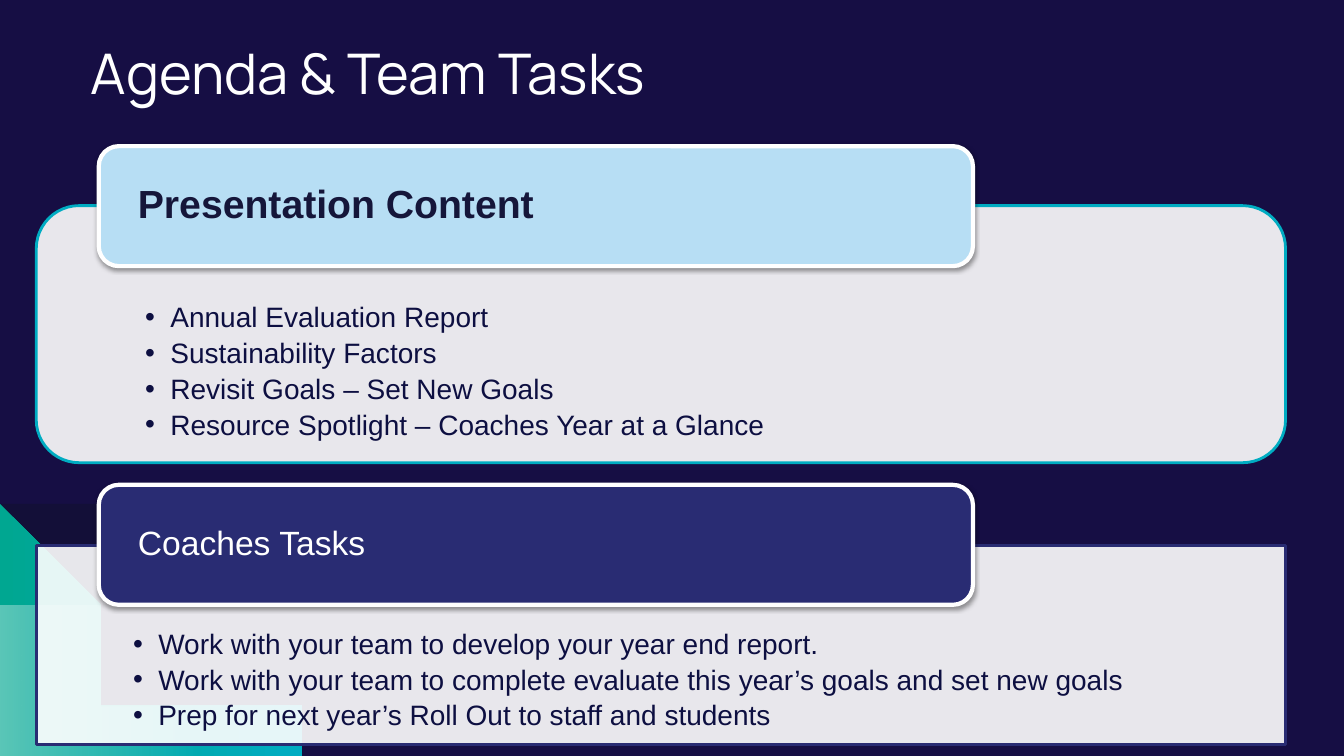
from dataclasses import dataclass
from typing import NamedTuple

from lxml import etree
from pptx import Presentation, util as u
from pptx.dml.color import RGBColor
from pptx.enum import shapes, text
from pptx.oxml.ns import qn

RECT = shapes.MSO_SHAPE.RECTANGLE
ROUND = shapes.MSO_SHAPE.ROUNDED_RECTANGLE
Point = tuple[float, float]


class Box(NamedTuple):
    left: float
    top: float
    width: float
    height: float


class Stop(NamedTuple):
    color: str
    alpha: int = 100


@dataclass
class Swoosh:
    """A corner shape under a cubic curve, filled from left to right."""
    curve: tuple[Point, Point, Point, Point]
    stops: list[Stop]


@dataclass
class Card:
    head: str
    font: dict
    fill: str
    edge: str
    kind: int
    tab: Box
    panel: Box
    body: Box
    items: list[str]


SWOOSHES = [
    Swoosh(((0, 4.13), (0.98, 7.39), (3.03, 7.5), (3.03, 7.5)),
           [Stop("12102F", 54)]),
    Swoosh(((0, 4.22), (0.95, 7.39), (2.95, 7.5), (2.95, 7.5)),
           [Stop("00A791"), Stop("00ACC2")]),
    Swoosh(((0, 5.06), (0, 5.06), (0.91, 7.35), (2.16, 7.5)),
           [Stop("FFFFFF", 36), Stop("FFFFFF", 0)]),
]
CARDS = [
    Card("Presentation Content", {"size": u.Pt(28), "bold": True, "color": "15163A"},
         "B7DEF4", "00ACC2", ROUND, Box(0.98, 1.45, 8.67, 1.19),
         Box(0.36, 2.04, 12.39, 2.55), Box(0.48, 2.17, 12.14, 2.3),
         ["Annual Evaluation Report", "Sustainability Factors",
          "Revisit Goals – Set New Goals",
          "Resource Spotlight – Coaches Year at a Glance"]),
    Card("Coaches Tasks", {"size": u.Pt(24), "bold": False, "color": "FFFFFF"},
         "292C73", "292C73", RECT, Box(0.98, 4.81, 8.67, 1.19),
         Box(0.36, 5.41, 12.39, 1.98), Box(0.36, 5.41, 12.39, 1.98),
         ["Work with your team to develop your year end report.",
          "Work with your team to complete evaluate this year’s goals and set new goals",
          "Prep for next year’s Roll Out to staff and students"]),
]


def paint(color, code: str, alpha: int = 100) -> None:
    """Set a colour format from a hex string and an opacity in percent."""
    color.rgb = RGBColor.from_string(code)
    if alpha < 100:
        host = color._xFill if hasattr(color, "_xFill") else color._color._xClr
        node = next(host.iter(qn("a:srgbClr")))
        etree.SubElement(node, qn("a:alpha"), val=str(alpha * 1000))


def solid(fill, code: str, alpha: int = 100) -> None:
    fill.solid()
    paint(fill.fore_color, code, alpha)


def put(obj, values: dict) -> None:
    """Set every attribute that the dict names."""
    for name, value in values.items():
        setattr(obj, name, value)


def place(shape, box: Box) -> None:
    put(shape, {name: u.Inches(side) for name, side in box._asdict().items()})


def frame(shape, pads: Box, anchor) -> None:
    """Set insets (left, top, right, bottom) and the anchor."""
    left, top, right, base = (u.Inches(pad) for pad in pads)
    put(shape.text_frame, {
        "margin_left": left, "margin_top": top, "margin_right": right,
        "margin_bottom": base, "vertical_anchor": anchor, "word_wrap": True,
        "auto_size": text.MSO_AUTO_SIZE.NONE})


def write(para, words: str, name: str, font: dict) -> None:
    run = para.add_run()
    run.text = words
    put(run.font, {"name": name, "size": font["size"], "bold": font["bold"]})
    paint(run.font.color, font["color"])
    para.alignment = text.PP_ALIGN.LEFT


def draw_swoosh(slide, item: Swoosh, steps: int = 40) -> None:
    dots = []
    for i in range(steps + 1):
        t = i / steps
        parts = ((1 - t) ** 3, 3 * t * (1 - t) ** 2, 3 * t * t * (1 - t), t ** 3)
        dots.append(tuple(sum(k * p[axis] for k, p in zip(parts, item.curve))
                          for axis in (0, 1)))
    pen = slide.shapes.build_freeform(*dots[0], scale=u.Inches(1))
    pen.add_line_segments(dots[1:] + [(0, 7.5)], close=True)
    shape = pen.convert_to_shape()
    shape.shadow.inherit = False
    shape.line.fill.background()
    if len(item.stops) == 1:
        solid(shape.fill, *item.stops[0])
        return
    shape.fill.gradient()
    shape.fill.gradient_angle = 0
    for slot, stop in zip(shape.fill.gradient_stops, item.stops):
        paint(slot.color, *stop)


def add_box(slide, kind: int, box: Box, fill: Stop, edge: str, width: float):
    shape = slide.shapes.add_shape(kind, *(u.Inches(side) for side in box))
    shape.shadow.inherit = False
    solid(shape.fill, *fill)
    solid(shape.line.fill, edge)
    shape.line.width = u.Pt(width)
    return shape


def cast(shape) -> None:
    """Give the shape a soft shadow straight below it."""
    effects = shape.element.spPr.find(qn("a:effectLst"))
    shade = etree.SubElement(effects, qn("a:outerShdw"), blurRad=str(u.Pt(3.1)),
                             dist=str(u.Pt(1.6)), dir="5400000", rotWithShape="0")
    tint = etree.SubElement(shade, qn("a:srgbClr"), val="000000")
    etree.SubElement(tint, qn("a:alpha"), val="38000")


def fill_list(body, card: Card) -> None:
    place(body, card.body)
    frame(body, Box(0.96, 0.84, 0.96, 0.16), text.MSO_ANCHOR.TOP)
    font = {"size": u.Pt(20), "bold": False, "color": "0D0F41"}
    for i, words in enumerate(card.items):
        para = body.text_frame.add_paragraph() if i else body.text_frame.paragraphs[0]
        write(para, words, "Arial", font)
        put(para, {"level": 1, "line_spacing": 0.9, "space_before": u.Pt(0),
                   "space_after": u.Pt(4)})
        props = para._p.get_or_add_pPr()
        props.set("marL", str(u.Inches(0.25)))
        props.set("indent", str(u.Inches(-0.25)))
        etree.SubElement(props, qn("a:buChar"), char="•")


def draw_card(slide, card: Card, body) -> None:
    add_box(slide, card.kind, card.panel, Stop("FFFFFF", 90), card.edge, 2)
    fill_list(body, card)
    slide.shapes.element.append(body.element)
    tab = add_box(slide, ROUND, card.tab, Stop(card.fill), "FFFFFF", 3)
    cast(tab)
    frame(tab, Box(0.33, 0, 0.33, 0), text.MSO_ANCHOR.MIDDLE)
    para = tab.text_frame.paragraphs[0]
    write(para, card.head, "Arial", card.font)
    para.line_spacing = 0.9


def main() -> None:
    deck = Presentation()
    put(deck, {"slide_width": u.Inches(13.33), "slide_height": u.Inches(7.5)})
    slide = deck.slides.add_slide(deck.slide_layouts[3])
    solid(slide.background.fill, "160E44")
    title, *bodies = slide.placeholders
    for item in SWOOSHES:
        draw_swoosh(slide, item)
    for card, body in zip(CARDS, bodies):
        draw_card(slide, card, body)
    place(title, Box(0.8, 0.26, 10.26, 0.92))
    frame(title, Box(0.1, 0.1, 0.1, 0.1), text.MSO_ANCHOR.MIDDLE)
    write(title.text_frame.paragraphs[0], "Agenda & Team Tasks", "Manrope",
          {"size": u.Pt(40), "bold": False, "color": "FFFFFF"})
    slide.shapes.element.append(title.element)
    deck.save("out.pptx")


if __name__ == "__main__":
    main()
